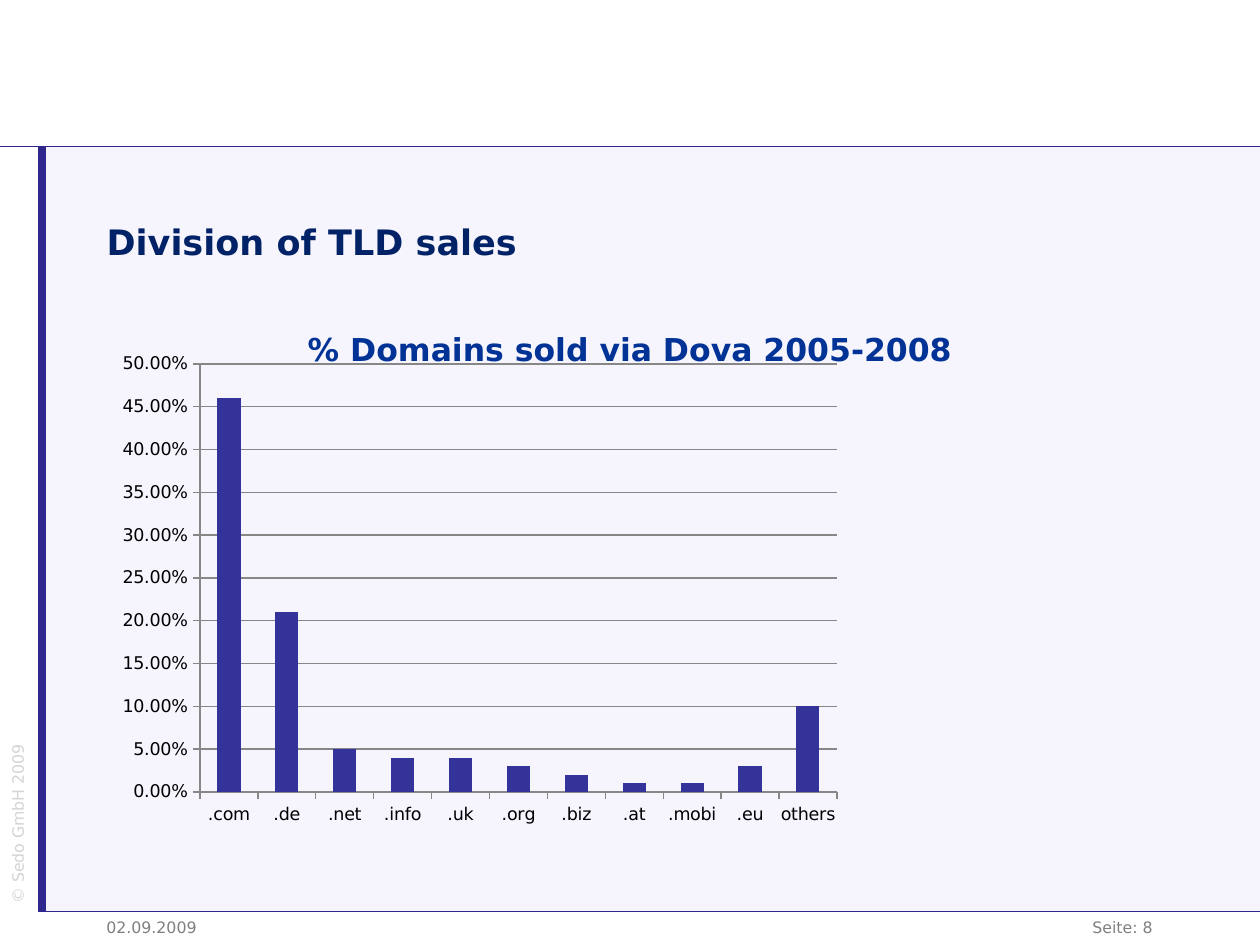
"""Build a slide with a column chart of domain sales by top-level domain."""
from dataclasses import dataclass

import pptx
import pptx.chart.data
import pptx.dml.color
import pptx.enum.chart
import pptx.enum.shapes
import pptx.enum.text
import pptx.oxml
import pptx.oxml.ns
import pptx.util

RGB = pptx.dml.color.RGBColor
ALIGN = pptx.enum.text.PP_ALIGN
PX = 914400 / 126
WIDTH, HEIGHT = 1260, 945
FONT = "DejaVu Sans"
WHITE = RGB(0xFF, 0xFF, 0xFF)
BLACK = RGB(0x00, 0x00, 0x00)
PANEL = RGB(0xF6, 0xF5, 0xFD)
INDIGO = RGB(0x30, 0x27, 0x8E)
NAVY = RGB(0x01, 0x22, 0x66)
BLUE = RGB(0x01, 0x32, 0x95)
BAR = RGB(0x33, 0x33, 0x99)
GRAY = RGB(0x80, 0x80, 0x80)
AXIS_GRAY = RGB(0x87, 0x87, 0x87)
LIGHT_GRAY = RGB(0xD4, 0xD4, 0xD4)


@dataclass(frozen=True)
class Box:
    left: int
    top: int
    width: int
    height: int

    def emu(self) -> list[int]:
        return [px(v) for v in (self.left, self.top, self.width, self.height)]


@dataclass(frozen=True)
class Band:
    box: Box
    color: RGB


@dataclass(frozen=True)
class Label:
    text: str
    box: Box
    color: RGB
    align: ALIGN = ALIGN.LEFT
    rotation: int = 0


PANEL_BAND = Band(Box(44, 147, 1216, 770), PANEL)
EDGE_BANDS = [
    Band(Box(0, 0, WIDTH, 147), INDIGO),
    Band(Box(0, 0, WIDTH, 146), WHITE),
    Band(Box(39, 911, 1221, 33), INDIGO),
    Band(Box(0, 912, WIDTH, 33), WHITE),
]
LABELS = [
    Label("© Sedo GmbH 2009", Box(-120, 762, 276, 32), LIGHT_GRAY, rotation=270),
    Label("Seite: 8", Box(903, 912, 262, 32), GRAY, ALIGN.RIGHT),
    Label("02.09.2009", Box(94, 912, 262, 32), GRAY),
]
TITLE_BOX = Box(94, 189, 1071, 105)
CHART_BOX = Box(95, 305, 1071, 577)
PLOT_BOX = Box(105, 59, 637, 428)
CHART_TITLE_LEFT, CHART_TITLE_TOP = 207, 18
CHART_TITLE = "% Domains sold via Dova 2005-2008"
SHARES = {
    ".com": 0.46, ".de": 0.21, ".net": 0.05, ".info": 0.04,
    ".uk": 0.04, ".org": 0.03, ".biz": 0.02, ".at": 0.01,
    ".mobi": 0.01, ".eu": 0.03, "others": 0.1,
}


def px(value: int) -> int:
    return round(value * PX)


def style(font, size: int, color: RGB, bold: bool = False) -> None:
    font.name, font.size, font.bold = FONT, pptx.util.Pt(size), bold
    font.color.rgb = color


def add_run(p, text: str, size: int, color: RGB, bold: bool = False) -> None:
    r = p.add_run()
    r.text = text
    style(r.font, size, color, bold)


def add_band(s, band: Band) -> None:
    rect = pptx.enum.shapes.MSO_SHAPE.RECTANGLE
    sp = s.shapes.add_shape(rect, *band.box.emu())
    sp.shadow.inherit = False
    sp.fill.solid()
    sp.fill.fore_color.rgb = band.color
    sp.line.fill.background()


def add_side_line(s) -> None:
    straight = pptx.enum.shapes.MSO_CONNECTOR.STRAIGHT
    line = s.shapes.add_connector(straight, px(42), 0, px(42), px(HEIGHT))
    line.line.color.rgb = INDIGO
    line.line.width = pptx.util.Pt(4.5)
    effects = pptx.oxml.ns.qn("a:effectLst")
    line.element.spPr.append(line.element.makeelement(effects))


def add_label(s, label: Label) -> None:
    sp = s.shapes.add_textbox(*label.box.emu())
    sp.rotation = label.rotation
    tf = sp.text_frame
    tf.word_wrap = True
    p = tf.paragraphs[0]
    p.alignment = label.align
    add_run(p, label.text, 9, label.color)


def set_title(s) -> None:
    sp = s.shapes.title
    sp.left, sp.top, sp.width, sp.height = TITLE_BOX.emu()
    sp.element.getparent().append(sp.element)
    tf = sp.text_frame
    tf.auto_size = pptx.enum.text.MSO_AUTO_SIZE.NONE
    tf.vertical_anchor = pptx.enum.text.MSO_ANCHOR.MIDDLE
    p = tf.paragraphs[0]
    p.alignment = ALIGN.LEFT
    add_run(p, "Division of TLD sales", 20, NAVY, bold=True)


def set_layout(parent, index: int, **values: float | str) -> None:
    for old in parent.findall(pptx.oxml.ns.qn("c:layout")):
        parent.remove(old)
    items = "".join(f'<c:{name} val="{value}"/>' for name, value in values.items())
    xml = (f'<c:layout {pptx.oxml.ns.nsdecls("c")}>'
           f"<c:manualLayout>{items}</c:manualLayout></c:layout>")
    parent.insert(index, pptx.oxml.parse_xml(xml))


def add_sales_chart(s) -> None:
    data = pptx.chart.data.CategoryChartData(number_format="0.00%")
    data.categories = list(SHARES)
    data.add_series(CHART_TITLE, list(SHARES.values()))
    kind = pptx.enum.chart.XL_CHART_TYPE.COLUMN_CLUSTERED
    chart = s.shapes.add_chart(kind, *CHART_BOX.emu(), data).chart
    style(chart.font, 10, BLACK)
    chart.has_legend = False

    width, height = CHART_BOX.width, CHART_BOX.height
    title = chart.chart_title
    add_run(title.text_frame.paragraphs[0], CHART_TITLE, 18, BLUE, bold=True)
    title.include_in_layout = False
    set_layout(title._element, 1, xMode="edge", yMode="edge",
               x=CHART_TITLE_LEFT / width, y=CHART_TITLE_TOP / height)
    plot_area = chart._chartSpace.chart.plotArea
    set_layout(plot_area, 0, layoutTarget="inner", xMode="edge", yMode="edge",
               x=PLOT_BOX.left / width, y=PLOT_BOX.top / height,
               w=PLOT_BOX.width / width, h=PLOT_BOX.height / height)

    plot = chart.plots[0]
    plot.gap_width = 150
    plot.vary_by_categories = False
    fill = plot.series[0].format.fill
    fill.solid()
    fill.fore_color.rgb = BAR

    for axis in (chart.category_axis, chart.value_axis):
        axis.major_tick_mark = pptx.enum.chart.XL_TICK_MARK.OUTSIDE
        axis.minor_tick_mark = pptx.enum.chart.XL_TICK_MARK.NONE
        axis.format.line.color.rgb = AXIS_GRAY
    values = chart.value_axis
    values.minimum_scale, values.maximum_scale, values.major_unit = 0, 0.5, 0.05
    values.has_major_gridlines = True
    values.major_gridlines.format.line.color.rgb = AXIS_GRAY
    values.tick_labels.number_format = "0.00%"
    values.tick_labels.number_format_is_linked = False


def main() -> None:
    prs = pptx.Presentation()
    prs.slide_width, prs.slide_height = px(WIDTH), px(HEIGHT)
    s = prs.slides.add_slide(prs.slide_layouts[5])
    add_band(s, PANEL_BAND)
    add_side_line(s)
    for band in EDGE_BANDS:
        add_band(s, band)
    set_title(s)
    for label in LABELS:
        add_label(s, label)
    add_sales_chart(s)
    prs.save("out.pptx")


if __name__ == "__main__":
    main()
